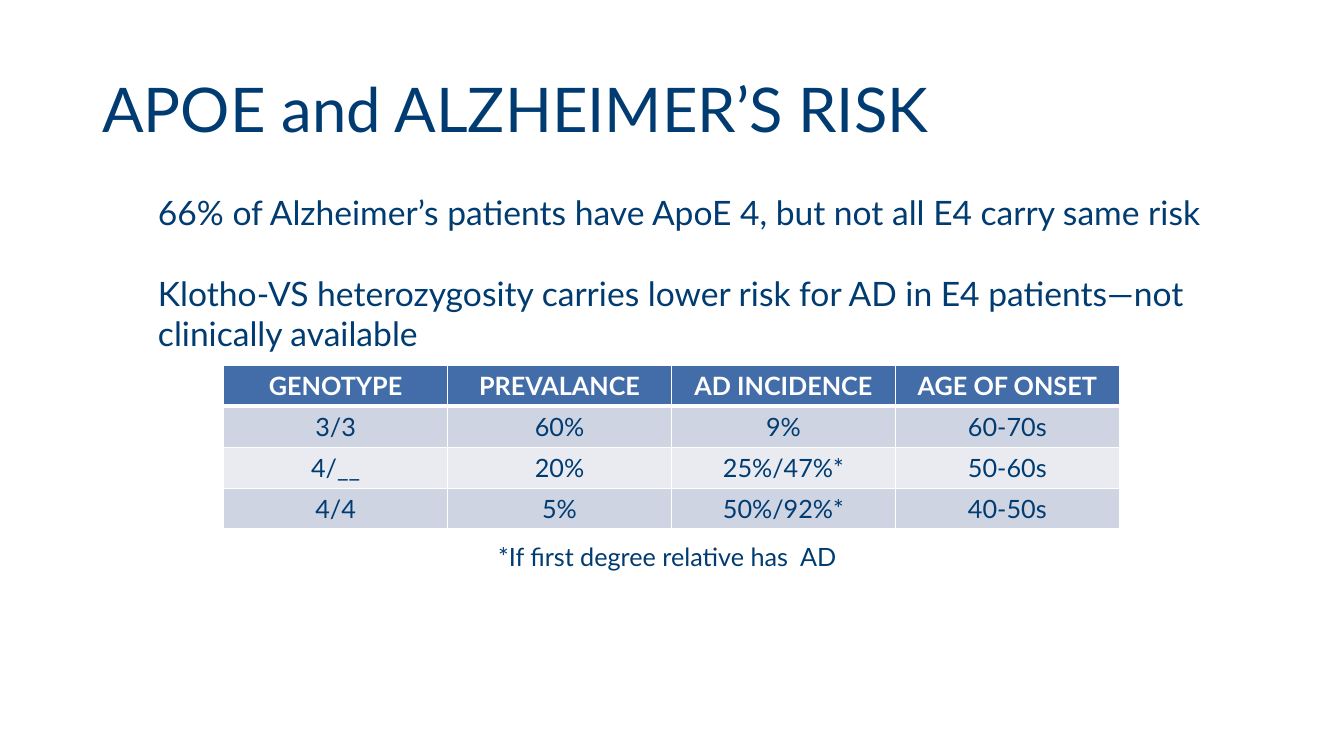
from dataclasses import dataclass

from lxml.etree import SubElement
from pptx import Presentation
from pptx.dml.color import RGBColor as Rgb
from pptx.enum.text import MSO_ANCHOR as Anchor, PP_ALIGN as Align
from pptx.oxml.ns import qn
from pptx.util import Pt

PX = 9525


@dataclass(frozen=True)
class Theme:
    face: str = "Lato"
    ink: str = "003C71"
    white: str = "FFFFFF"
    head: str = "426DA9"
    bands: tuple = ("CFD4E2", "E9EBF1")
    title: int = 44
    body: int = 24
    small: int = 18
    gap: int = 29


THEME = Theme()
GENES = [
    ["GENOTYPE", "PREVALANCE", "AD INCIDENCE", "AGE OF ONSET"],
    ["3/3", "60%", "9%", "60-70s"],
    ["4/__", "20%", "25%/47%*", "50-60s"],
    ["4/4", "5%", "50%/92%*", "40-50s"],
]


def emu(box):
    return [n * PX for n in box]


def style(para, size, color=THEME.ink, bold=False, **form):
    for name, value in form.items():
        setattr(para, name, value)
    look = {"name": THEME.face, "size": Pt(size), "bold": bold}
    for run in para.runs:
        for name, value in look.items():
            setattr(run.font, name, value)
        run.font.color.rgb = Rgb.from_string(color)


def add_text(slide, box, lines, size, anchor=Anchor.TOP, **form):
    frame = slide.shapes.add_textbox(*emu(box)).text_frame
    frame.word_wrap = True
    frame.vertical_anchor = anchor
    for i, line in enumerate(lines):
        para = frame.add_paragraph() if i else frame.paragraphs[0]
        para.text = line
        style(para, size, **form)
        if i:
            para.space_before = Pt(THEME.gap)


def add_edges(cell, widths):
    props = cell._tc.get_or_add_tcPr()
    for i, (side, width) in enumerate(widths.items()):
        edge = SubElement(props, qn(f"a:ln{side}"), w=str(Pt(width)))
        fill = SubElement(edge, qn("a:solidFill"))
        SubElement(fill, qn("a:srgbClr"), val=THEME.white)
        props.insert(i, edge)


def add_genes(slide, box, rows):
    grid = slide.shapes.add_table(len(rows), len(rows[0]), *emu(box)).table
    for r, row in enumerate(rows):
        top = r == 0
        back = THEME.head if top else THEME.bands[(r - 1) % 2]
        color = THEME.white if top else THEME.ink
        edges = {"L": 1, "R": 1, "T": 3 if r == 1 else 1, "B": 3 if top else 1}
        for c, text in enumerate(row):
            cell = grid.cell(r, c)
            cell.text = text
            cell.fill.solid()
            cell.fill.fore_color.rgb = Rgb.from_string(back)
            style(cell.text_frame.paragraphs[0], THEME.small, color, top,
                  alignment=Align.CENTER)
            add_edges(cell, edges)


def add_risk(deck):
    slide = deck.slides.add_slide(deck.slide_layouts[6])
    add_text(slide, (88, 38, 1104, 139), ["APOE and ALZHEIMER’S RISK"],
             THEME.title, Anchor.MIDDLE, line_spacing=0.9)
    add_genes(slide, (213, 348, 853, 156), GENES)
    add_text(slide, (465, 511, 351, 97),
             ["*If first degree relative has  AD"], THEME.small)
    add_text(slide, (141, 178, 1062, 165), [
        "66% of Alzheimer’s patients have ApoE 4, but not all E4 carry same risk",
        "Klotho-VS heterozygosity carries lower risk for AD in E4 patients—not "
        "clinically available",
    ], THEME.body)


def main():
    deck = Presentation()
    deck.slide_width, deck.slide_height = emu((1280, 720))
    add_risk(deck)
    deck.save("out.pptx")


if __name__ == "__main__":
    main()
